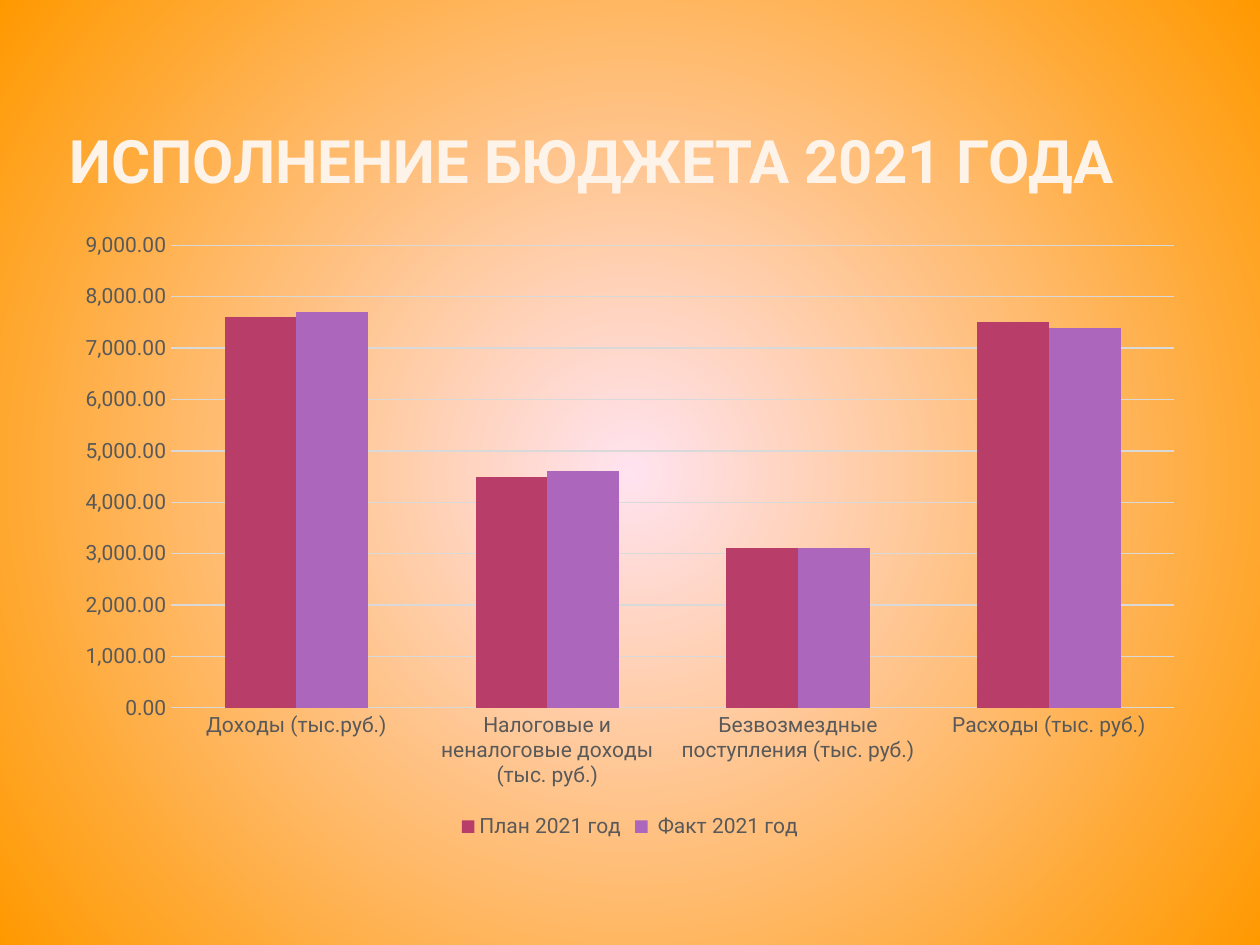
import pptx
import pptx.chart.data
import pptx.dml.color
import pptx.enum.chart
import pptx.enum.text
import pptx.oxml
import pptx.oxml.ns
import pptx.util
from dataclasses import dataclass
from pptx.util import Inches


@dataclass(frozen=True)
class Theme:
    font: str = "Roboto"
    core: str = "FFE3F0"
    edge: str = "FF9900"
    title: str = "FEF3E8"
    label: str = "595959"
    grid: str = "D9D9D9"
    bars: tuple = ("B83D68", "AC66BB")
    title_size: float = 34.2
    label_size: float = 12


THEME = Theme()
CATS = (
    "Доходы (тыс.руб.)",
    "Налоговые и неналоговые доходы (тыс. руб.)",
    "Безвозмездные поступления (тыс. руб.)",
    "Расходы (тыс. руб.)",
)
SERIES = {
    "План 2021 год": (7600, 4500, 3100, 7500),
    " Факт 2021 год": (7700, 4600, 3100, 7400),
}


def rgb(code):
    return pptx.dml.color.RGBColor.from_string(code)


def style(font, size, color, bold=False):
    font.name = THEME.font
    font.size = pptx.util.Pt(size)
    font.bold = bold
    font.color.rgb = rgb(color)


def paint_back(slide):
    """Fill the background with a gradient that spreads from the centre."""
    fill = slide.background.fill
    fill.gradient()
    for stop, color in zip(fill.gradient_stops, (THEME.core, THEME.edge)):
        stop.color.rgb = rgb(color)
    line = next(slide.element.iter(pptx.oxml.ns.qn("a:lin")))
    ring = pptx.oxml.parse_xml(
        f'<a:path {pptx.oxml.ns.nsdecls("a")} path="circle">'
        '<a:fillToRect l="50000" t="50000" r="50000" b="50000"/></a:path>'
    )
    line.getparent().replace(line, ring)


def add_title(slide, left, top, width, height):
    frame = slide.shapes.add_textbox(left, top, width, height).text_frame
    frame.word_wrap = True
    frame.vertical_anchor = pptx.enum.text.MSO_ANCHOR.BOTTOM
    frame.margin_left = frame.margin_right = Inches(0.05)
    frame.margin_top = frame.margin_bottom = 0
    frame.text = "ИСПОЛНЕНИЕ БЮДЖЕТА 2021 ГОДА"
    style(frame.paragraphs[0].runs[0].font, THEME.title_size, THEME.title, True)


def style_axes(chart):
    for axis in (chart.category_axis, chart.value_axis):
        axis.major_tick_mark = pptx.enum.chart.XL_TICK_MARK.NONE
        axis.minor_tick_mark = pptx.enum.chart.XL_TICK_MARK.NONE
        axis.format.line.fill.background()
        style(axis.tick_labels.font, THEME.label_size, THEME.label)
    scale = chart.value_axis
    scale.minimum_scale, scale.maximum_scale = 0, 9000
    scale.major_unit = 1000
    scale.tick_labels.number_format = "#,##0.00"
    scale.tick_labels.number_format_is_linked = False
    scale.has_major_gridlines = True
    line = scale.major_gridlines.format.line
    line.color.rgb = rgb(THEME.grid)
    line.width = pptx.util.Pt(0.75)


def add_chart(slide, left, top, width, height):
    data = pptx.chart.data.CategoryChartData()
    data.categories = CATS
    for name, vals in SERIES.items():
        data.add_series(name, vals)
    kind = pptx.enum.chart.XL_CHART_TYPE.COLUMN_CLUSTERED
    chart = slide.shapes.add_chart(kind, left, top, width, height, data).chart
    style(chart.font, THEME.label_size, THEME.label)
    chart.has_title = False
    chart.has_legend = True
    chart.legend.position = pptx.enum.chart.XL_LEGEND_POSITION.BOTTOM
    chart.legend.include_in_layout = False
    style(chart.legend.font, THEME.label_size, THEME.label)
    plot = chart.plots[0]
    plot.vary_by_categories = False
    plot.gap_width, plot.overlap = 150, 0
    for bar, color in zip(plot.series, THEME.bars):
        bar.format.fill.solid()
        bar.format.fill.fore_color.rgb = rgb(color)
    style_axes(chart)


def main():
    deck = pptx.Presentation()
    deck.slide_width, deck.slide_height = Inches(10), Inches(7.5)
    slide = deck.slides.add_slide(deck.slide_layouts[6])
    paint_back(slide)
    left, width = Inches(0.5), Inches(9)
    add_title(slide, left, Inches(0.3), width, Inches(1.25))
    add_chart(slide, left, Inches(1.75), width, Inches(4.95))
    deck.save("out.pptx")


if __name__ == "__main__":
    main()
